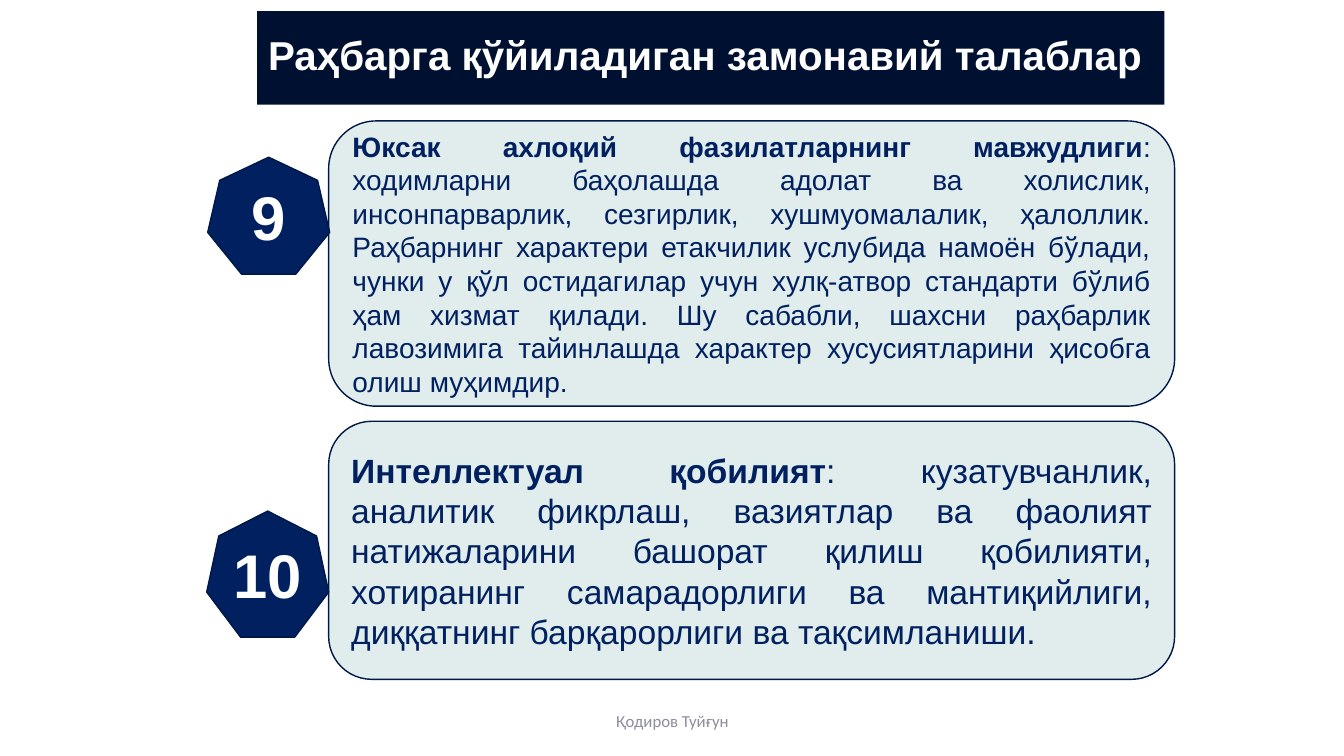
from pptx import Presentation
from pptx.dml.color import RGBColor
from pptx.enum import shapes, text
from pptx.util import Inches, Pt

NAVY, EDGE, PALE, WHITE = "002060", "001847", "E0EDEC", "FFFFFF"
SHAPE = shapes.MSO_SHAPE
ALIGN = text.PP_ALIGN

REQUIREMENTS = [
    ("9", (2.06, 1.56, 1.21, 1.16), (3.26, 1.2, 8.39, 2.83), 20,
     "Юксак ахлоқий фазилатларнинг мавжудлиги",
     ": ходимларни баҳолашда адолат ва холислик, инсонпарварлик, сезгирлик, "
     "хушмуомалалик, ҳалоллик. Раҳбарнинг характери етакчилик услубида намоён "
     "бўлади, чунки у қўл остидагилар учун хулқ-атвор стандарти бўлиб ҳам хизмат "
     "қилади. Шу сабабли, шахсни раҳбарлик лавозимига тайинлашда характер "
     "хусусиятларини ҳисобга олиш муҳимдир. "),
    ("10", (2.05, 5.07, 1.21, 1.25), (3.26, 4.18, 8.39, 2.56), 24,
     "Интеллектуал қобилият",
     ": кузатувчанлик, аналитик фикрлаш, вазиятлар ва фаолият натижаларини башорат "
     "қилиш қобилияти, хотиранинг самарадорлиги ва мантиқийлиги, диққатнинг "
     "барқарорлиги ва тақсимланиши."),
]


def color(value):
    """Turn a hex string into a colour."""
    return RGBColor.from_string(value)


def add_panel(page, kind, place, fill, line=None):
    """Add a flat filled shape, outlined when a line colour is given."""
    panel = page.shapes.add_shape(kind, *map(Inches, place))
    panel.shadow.inherit = False
    panel.fill.solid()
    panel.fill.fore_color.rgb = color(fill)
    if line:
        panel.line.color.rgb = color(line)
        panel.line.width = Pt(1)
    else:
        panel.line.fill.background()
    return panel


def write(box, spans, size, ink, align=ALIGN.CENTER, font="Arial", wrap=True):
    """Fill a box with one paragraph of (words, bold) spans."""
    frame = box.text_frame
    frame.word_wrap = wrap
    frame.vertical_anchor = text.MSO_ANCHOR.MIDDLE
    para = frame.paragraphs[0]
    para.alignment = align
    for words, bold in spans:
        span = para.add_run()
        span.text = words
        span.font.name = font
        span.font.size = Pt(size)
        span.font.bold = bold
        span.font.color.rgb = color(ink)
    return para


def add_title(page, words):
    """Add the dark title band."""
    band = add_panel(page, SHAPE.RECTANGLE, (2.55, 0.11, 9, 0.93), "001030")
    write(band, [(words, True)], 28.8, WHITE).line_spacing = 0.9


def add_requirement(page, number, badge_place, card_place, size, heading, detail):
    """Add a card with its numbered heptagon badge."""
    card = add_panel(page, SHAPE.ROUNDED_RECTANGLE, card_place, PALE, EDGE)
    write(card, [(heading, True), (detail, False)], size, NAVY, ALIGN.JUSTIFY)
    badge = add_panel(page, SHAPE.HEPTAGON, badge_place, NAVY, EDGE)
    write(badge, [(number, True)], 44, WHITE, wrap=False)


def add_footer(page, words):
    """Add the author line at the bottom."""
    box = page.shapes.add_textbox(*map(Inches, (4.42, 6.95, 4.5, 0.4)))
    write(box, [(words, False)], 12, "8C8D9D", font="Calibri")


def main():
    """Build the slide and save it."""
    deck = Presentation()
    deck.slide_width, deck.slide_height = Inches(13.33), Inches(7.5)
    page = deck.slides.add_slide(deck.slide_layouts[6])
    add_title(page, "Раҳбарга қўйиладиган замонавий талаблар ")
    for requirement in REQUIREMENTS:
        add_requirement(page, *requirement)
    add_footer(page, "Қодиров Туйғун")
    deck.save("out.pptx")


if __name__ == "__main__":
    main()
